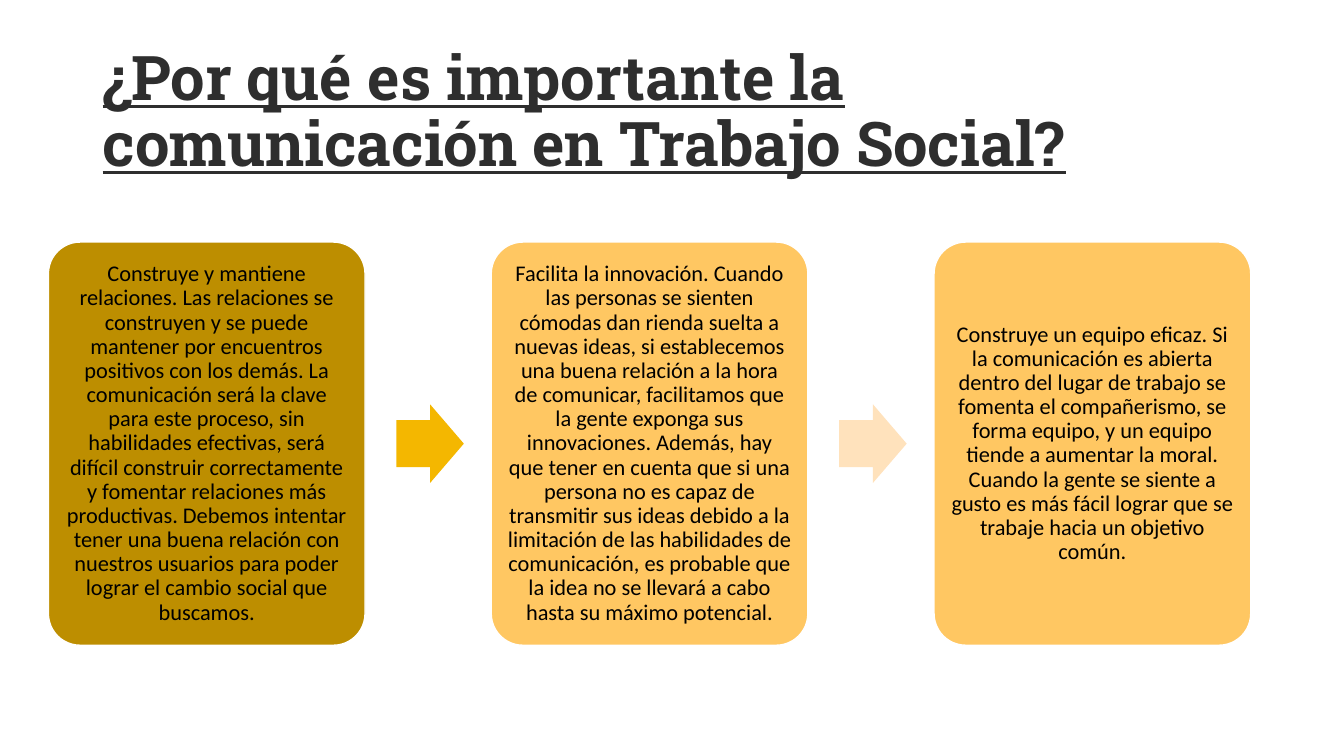
from pptx import Presentation
from pptx.dml.color import RGBColor
from pptx.enum.shapes import MSO_SHAPE
from pptx.enum.text import MSO_ANCHOR, PP_ALIGN
from pptx.util import Cm, Pt

CHARCOAL = RGBColor(0x2E, 0x2E, 0x2E)
BLACK = RGBColor(0x00, 0x00, 0x00)
WHITE = RGBColor(0xFF, 0xFF, 0xFF)
OCHRE = RGBColor(0xBD, 0x8E, 0x00)
APRICOT = RGBColor(0xFF, 0xC7, 0x62)
AMBER = RGBColor(0xF4, 0xB7, 0x00)
CREAM = RGBColor(0xFF, 0xE2, 0xBC)

# Card text, card colour, colour of the arrow that follows
REASONS = [
    ("Construye y mantiene relaciones. Las relaciones se construyen y se puede "
     "mantener por encuentros positivos con los demás. La comunicación será la "
     "clave para este proceso, sin habilidades efectivas, será difícil construir "
     "correctamente y fomentar relaciones más productivas. Debemos intentar tener "
     "una buena relación con nuestros usuarios para poder lograr el cambio social "
     "que buscamos.", OCHRE, AMBER),
    ("Facilita la innovación. Cuando las personas se sienten cómodas dan rienda "
     "suelta a nuevas ideas, si establecemos una buena relación a la hora de "
     "comunicar, facilitamos que la gente exponga sus innovaciones. Además, hay "
     "que tener en cuenta que si una persona no es capaz de transmitir sus ideas "
     "debido a la limitación de las habilidades de comunicación, es probable que "
     "la idea no se llevará a cabo hasta su máximo potencial.", APRICOT, CREAM),
    ("Construye un equipo eficaz. Si la comunicación es abierta dentro del lugar "
     "de trabajo se fomenta el compañerismo, se forma equipo, y un equipo tiende a "
     "aumentar la moral. Cuando la gente se siente a gusto es más fácil lograr que "
     "se trabaje hacia un objetivo común.", APRICOT, None),
]

presentation = Presentation()
presentation.slide_width = Cm(33.87)
presentation.slide_height = Cm(19.05)
slide = presentation.slides.add_slide(presentation.slide_layouts[6])

# Title
title = slide.shapes.add_textbox(Cm(2.34), Cm(1.02), Cm(29.21), Cm(3.68)).text_frame
title.word_wrap = True
title.vertical_anchor = MSO_ANCHOR.MIDDLE
heading = title.paragraphs[0]
heading.text = "¿Por qué es importante la comunicación en Trabajo Social?"
heading.line_spacing = 0.9
heading.font.name = "Roboto Slab"
heading.font.size = Pt(44)
heading.font.bold = True
heading.font.underline = True
heading.font.color.rgb = CHARCOAL

# Reason cards, each followed by an arrow to the next
CARD_LEFT, CARD_PITCH = 1.22, 11.16
for index, (reason, card_color, arrow_color) in enumerate(REASONS):
    left = CARD_LEFT + index * CARD_PITCH
    card = slide.shapes.add_shape(
        MSO_SHAPE.ROUNDED_RECTANGLE, Cm(left), Cm(6.1), Cm(7.98), Cm(10.16))
    card.adjustments[0] = 0.1
    card.shadow.inherit = False
    card.fill.solid()
    card.fill.fore_color.rgb = card_color
    card.line.color.rgb = WHITE
    card.line.width = Pt(1)

    frame = card.text_frame
    frame.word_wrap = True
    frame.vertical_anchor = MSO_ANCHOR.MIDDLE
    frame.margin_left = frame.margin_right = Cm(0.17)
    frame.margin_top = frame.margin_bottom = Cm(0.17)
    paragraph = frame.paragraphs[0]
    paragraph.text = reason
    paragraph.alignment = PP_ALIGN.CENTER
    paragraph.line_spacing = 0.9
    paragraph.font.name = "Calibri"
    paragraph.font.size = Pt(16)
    paragraph.font.color.rgb = BLACK

    if arrow_color is not None:
        arrow = slide.shapes.add_shape(
            MSO_SHAPE.RIGHT_ARROW, Cm(left + 8.77), Cm(10.19), Cm(1.7), Cm(1.98))
        arrow.adjustments[0] = 0.6
        arrow.adjustments[1] = 0.5
        arrow.shadow.inherit = False
        arrow.fill.solid()
        arrow.fill.fore_color.rgb = arrow_color
        arrow.line.fill.background()

presentation.save("out.pptx")
